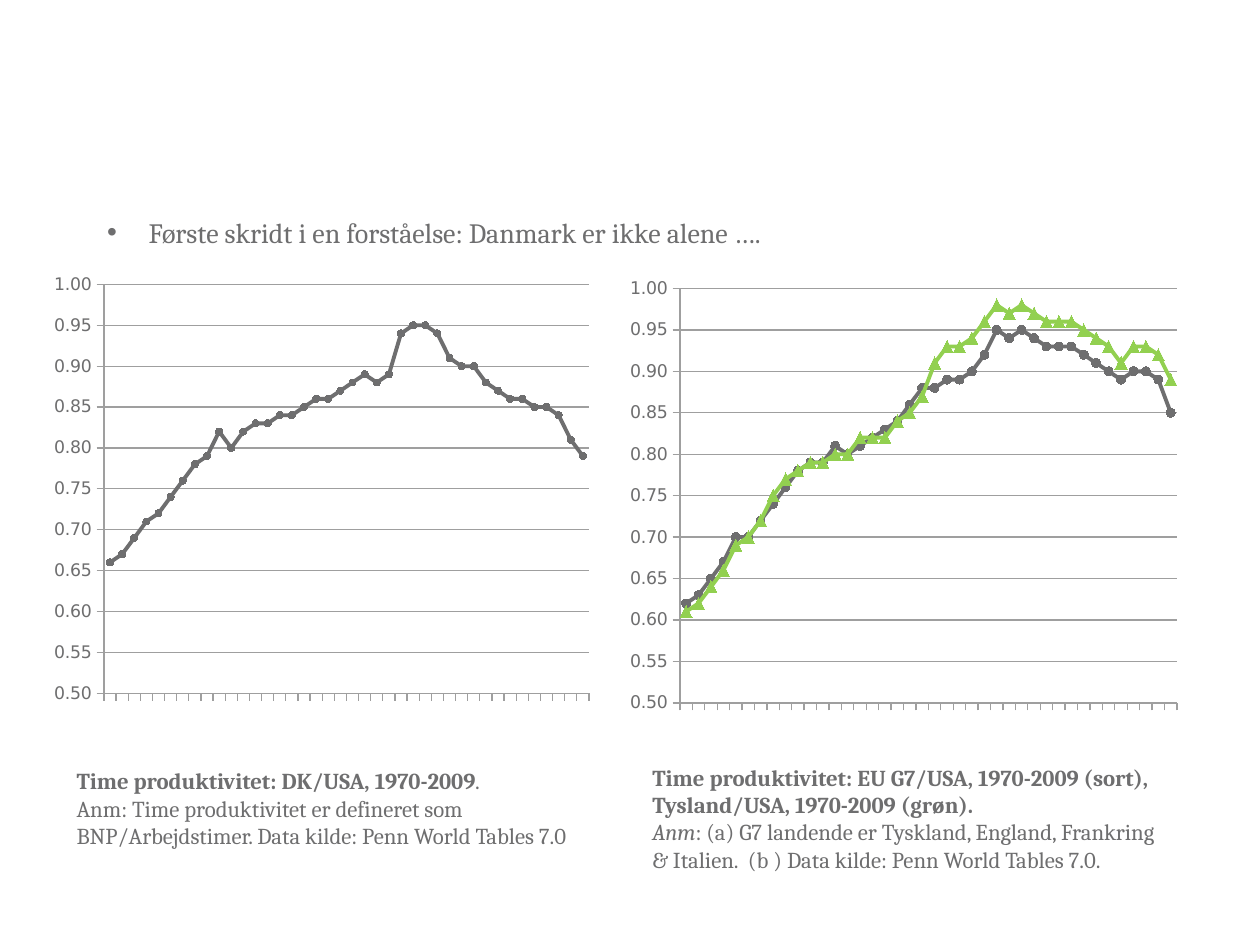
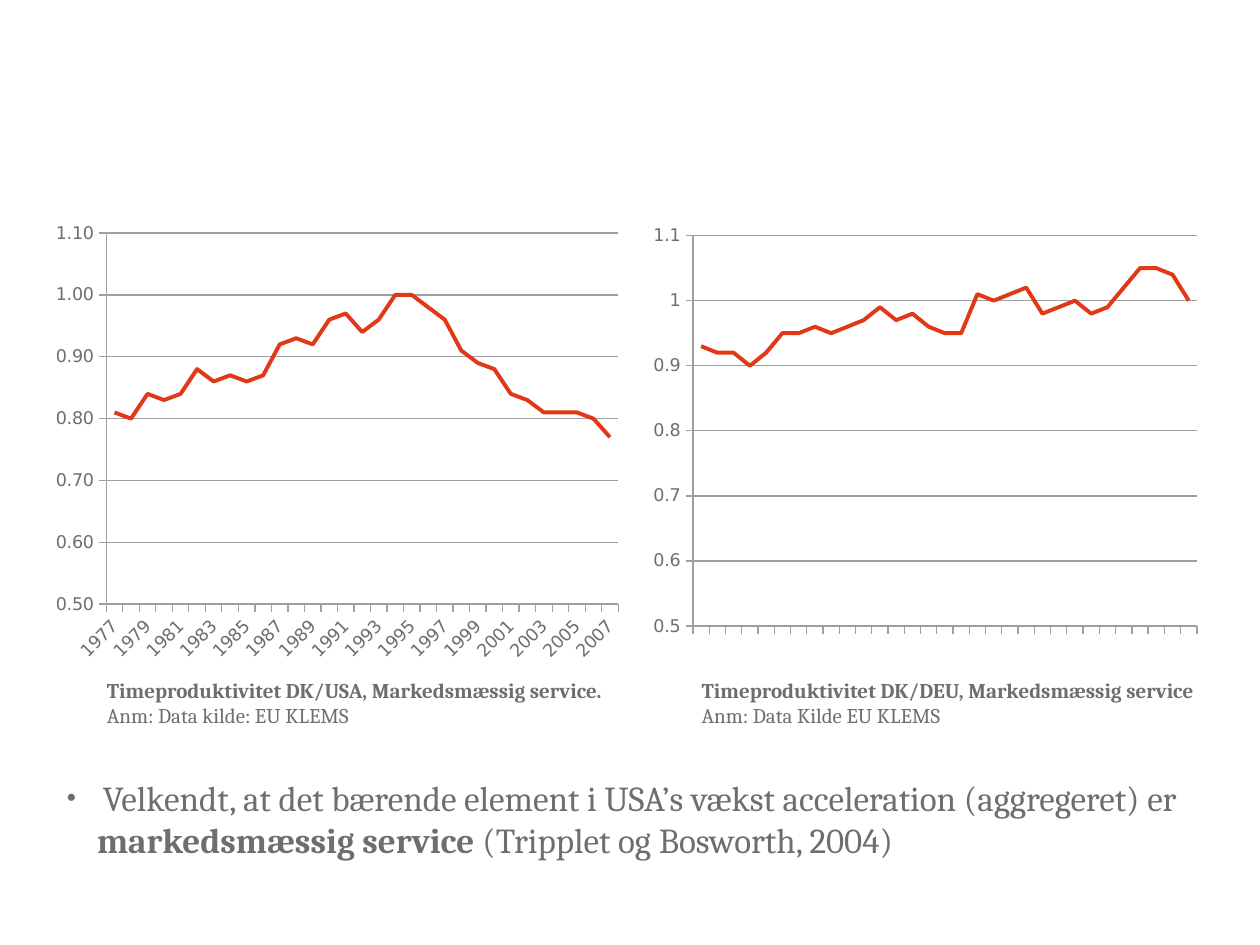
from lxml import etree
from pptx import Presentation
from pptx.chart.data import CategoryChartData
from pptx.dml.color import RGBColor
from pptx.enum.chart import XL_CHART_TYPE, XL_MARKER_STYLE, XL_TICK_LABEL_POSITION, XL_TICK_MARK
from pptx.enum.text import MSO_ANCHOR, MSO_AUTO_SIZE
from pptx.oxml.ns import qn
from pptx.util import Inches, Pt

LINE, LINE_MARKERS = XL_CHART_TYPE.LINE, XL_CHART_TYPE.LINE_MARKERS
CIRCLE, TRIANGLE = XL_MARKER_STYLE.CIRCLE, XL_MARKER_STYLE.TRIANGLE
LOW, NO_LABELS = XL_TICK_LABEL_POSITION.LOW, XL_TICK_LABEL_POSITION.NONE
OUTSIDE, NO_TICKS = XL_TICK_MARK.OUTSIDE, XL_TICK_MARK.NONE
TOP, NO_AUTOFIT = MSO_ANCHOR.TOP, MSO_AUTO_SIZE.NONE

GRAY, GREEN, RED, GRID = "6E6E6F", "92D050", "E13818", "9F9F9F"
TEXT_FONT, CHART_FONT = "Cambria", "DejaVu Sans"
TITLE_AND_CONTENT = 1

TOTAL_YEARS = range(1970, 2010)
SERVICE_YEARS = range(1977, 2008)

DK_USA = [
    0.66, 0.67, 0.69, 0.71, 0.72, 0.74, 0.76, 0.78, 0.79, 0.82,
    0.80, 0.82, 0.83, 0.83, 0.84, 0.84, 0.85, 0.86, 0.86, 0.87,
    0.88, 0.89, 0.88, 0.89, 0.94, 0.95, 0.95, 0.94, 0.91, 0.90,
    0.90, 0.88, 0.87, 0.86, 0.86, 0.85, 0.85, 0.84, 0.81, 0.79,
]
G7_USA = [
    0.62, 0.63, 0.65, 0.67, 0.70, 0.70, 0.72, 0.74, 0.76, 0.78,
    0.79, 0.79, 0.81, 0.80, 0.81, 0.82, 0.83, 0.84, 0.86, 0.88,
    0.88, 0.89, 0.89, 0.90, 0.92, 0.95, 0.94, 0.95, 0.94, 0.93,
    0.93, 0.93, 0.92, 0.91, 0.90, 0.89, 0.90, 0.90, 0.89, 0.85,
]
GERMANY_USA = [
    0.61, 0.62, 0.64, 0.66, 0.69, 0.70, 0.72, 0.75, 0.77, 0.78,
    0.79, 0.79, 0.80, 0.80, 0.82, 0.82, 0.82, 0.84, 0.85, 0.87,
    0.91, 0.93, 0.93, 0.94, 0.96, 0.98, 0.97, 0.98, 0.97, 0.96,
    0.96, 0.96, 0.95, 0.94, 0.93, 0.91, 0.93, 0.93, 0.92, 0.89,
]
SERVICE_DK_USA = [
    0.81, 0.80, 0.84, 0.83, 0.84, 0.88, 0.86, 0.87, 0.86, 0.87, 0.92,
    0.93, 0.92, 0.96, 0.97, 0.94, 0.96, 1.00, 1.00, 0.98, 0.96, 0.91,
    0.89, 0.88, 0.84, 0.83, 0.81, 0.81, 0.81, 0.80, 0.77,
]
SERVICE_DK_GERMANY = [
    0.93, 0.92, 0.92, 0.90, 0.92, 0.95, 0.95, 0.96, 0.95, 0.96, 0.97,
    0.99, 0.97, 0.98, 0.96, 0.95, 0.95, 1.01, 1.00, 1.01, 1.02, 0.98,
    0.99, 1.00, 0.98, 0.99, 1.02, 1.05, 1.05, 1.04, 1.00,
]

BOLD, ITALIC, PLAIN = {"bold": True}, {"italic": True}, {}
SMALL = {"size": Pt(15)}

SLIDES = [
    {
        "years": TOTAL_YEARS,
        "scale": {"minimum_scale": 0.5, "maximum_scale": 1, "major_unit": 0.05},
        "bullet": {
            "box": (0.75, 1.66, 7.64, 0.37), "size": 16, "indent": 0.33,
            "paragraphs": [[("Første skridt i en forståelse: Danmark er ikke alene ….", PLAIN)]],
        },
        "charts": [
            {"box": (0.43, 2.18, 4.25, 3.7), "plot": (0.35, 0.05, 3.9, 3.27), "format": "0.00",
             "series": [("DK/USA", DK_USA, GRAY, CIRCLE, 4)]},
            {"box": (5, 2.18, 4.49, 3.78), "plot": (0.35, 0.11, 3.99, 3.29), "format": "0.00",
             "series": [("EU G7/USA", G7_USA, GRAY, CIRCLE, 5),
                        ("Tyskland/USA", GERMANY_USA, GREEN, TRIANGLE, 7)]},
        ],
        "captions": [
            {"box": (0.51, 6.04, 4.33, 0.76), "size": 13, "paragraphs": [
                [("Time produktivitet: DK/USA, 1970-2009", BOLD), (".", PLAIN)],
                [("Anm: Time produktivitet er defineret som BNP/Arbejdstimer. "
                  "Data kilde: Penn World Tables 7.0", PLAIN)],
            ]},
            {"box": (5.08, 6.01, 4.33, 1.2), "size": 13, "paragraphs": [
                [("Time produktivitet: EU G7/USA, 1970-2009 (sort), "
                  "Tysland/USA, 1970-2009 (grøn).", BOLD)],
                [("Anm", ITALIC), (": (a) G7 landende er Tyskland, England, Frankring & Italien.  "
                                   "(b ) Data kilde: Penn World Tables 7.0.", PLAIN)],
            ]},
        ],
    },
    {
        "years": SERVICE_YEARS,
        "scale": {"minimum_scale": 0.5, "maximum_scale": 1.1, "major_unit": 0.1},
        "bullet": {
            "box": (0.43, 6.11, 9.14, 0.77), "size": 20, "indent": 0.24,
            "paragraphs": [[
                (" ", SMALL),
                ("Velkendt, at det bærende element i USA’s vækst acceleration (aggregeret) er ", PLAIN),
                ("markedsmæssig service", BOLD),
                (" (Tripplet og Bosworth, 2004)", PLAIN),
            ]],
        },
        "charts": [
            {"box": (0.35, 1.7, 4.65, 3.62), "format": "0.00", "show_years": True,
             "series": [("DK/USA", SERVICE_DK_USA, RED, None, None)]},
            {"box": (4.92, 1.78, 4.8, 3.62), "plot": (0.58, 0.09, 4, 3.1), "format": "General",
             "series": [("DK/DEU", SERVICE_DK_GERMANY, RED, None, None)]},
        ],
        "captions": [
            {"box": (0.75, 5.33, 4.33, 0.51), "size": 12, "paragraphs": [
                [("Timeproduktivitet DK/USA, Markedsmæssig service.", BOLD)],
                [("Anm: Data kilde: EU KLEMS", PLAIN)],
            ]},
            {"box": (5.47, 5.33, 4.33, 0.51), "size": 12, "paragraphs": [
                [("Timeproduktivitet DK/DEU, Markedsmæssig service", BOLD)],
                [("Anm: Data Kilde EU KLEMS", PLAIN)],
            ]},
        ],
    },
]


def color(value):
    """Turn a hex string into a colour."""
    return RGBColor.from_string(value)


def set_attributes(target, values):
    """Set each named value on the target."""
    for name, value in values.items():
        setattr(target, name, value)


def set_line(line, value, width):
    """Give a line its colour and its width in points."""
    line.color.rgb = color(value)
    line.width = Pt(width)


def set_font(font, name, size, style=PLAIN):
    """Give a font its name, size and text colour, then any special style."""
    set_attributes(font, {"name": name, "size": Pt(size), **style})
    font.color.rgb = color(GRAY)


def fill_text(shape, size, paragraphs):
    """Write formatted paragraphs into a shape."""
    frame = shape.text_frame
    set_attributes(frame, {"word_wrap": True, "auto_size": NO_AUTOFIT, "vertical_anchor": TOP})
    for index, runs in enumerate(paragraphs):
        paragraph = frame.add_paragraph() if index else frame.paragraphs[0]
        paragraph.space_before = Pt(0)
        for text, style in runs:
            run = paragraph.add_run()
            run.text = text
            set_font(run.font, TEXT_FONT, size, style)


def fill_bullet(placeholder, bullet):
    """Place the body placeholder and write its bulleted line."""
    names = ("left", "top", "width", "height")
    set_attributes(placeholder, dict(zip(names, map(Inches, bullet["box"]))))
    properties = placeholder.text_frame.paragraphs[0]._p.get_or_add_pPr()
    indent = Inches(bullet["indent"])
    properties.set("marL", str(indent))
    properties.set("indent", str(-indent))
    etree.SubElement(properties, qn("a:buChar")).set("char", "•")
    fill_text(placeholder, bullet["size"], bullet["paragraphs"])


def set_plot_area(chart, box, plot):
    """Fix the inner plot area, given in inches from the chart's corner."""
    area = chart._chartSpace.find(f".//{qn('c:plotArea')}")
    for layout in area.findall(qn("c:layout")):
        area.remove(layout)
    layout = etree.Element(qn("c:layout"))
    area.insert(0, layout)
    manual = etree.SubElement(layout, qn("c:manualLayout"))
    width, height = box[2:]
    fractions = [length / side for length, side in zip(plot, (width, height) * 2)]
    values = {"layoutTarget": "inner", "xMode": "edge", "yMode": "edge",
              **dict(zip("xywh", fractions))}
    for name, value in values.items():
        etree.SubElement(manual, qn(f"c:{name}")).set("val", str(value))


def slant_years(axis):
    """Show every second year, turned 45 degrees."""
    set_font(axis.tick_labels.font, CHART_FONT, 10)
    element = axis._element
    element.find(f"{qn('c:txPr')}/{qn('a:bodyPr')}").set("rot", "-2700000")
    skip = etree.Element(qn("c:tickLblSkip"))
    skip.set("val", "2")
    element.find(qn("c:noMultiLvlLbl")).addprevious(skip)


def add_line_chart(slide, years, scale, content):
    """Add a line chart of productivity ratios."""
    data = CategoryChartData(number_format="0.00")
    data.categories = [str(year) for year in years]
    for name, values, *_ in content["series"]:
        data.add_series(name, values)
    kind = LINE_MARKERS if content["series"][0][3] else LINE
    chart = slide.shapes.add_chart(kind, *map(Inches, content["box"]), data).chart
    set_attributes(chart, {"has_title": False, "has_legend": False})
    set_font(chart.font, CHART_FONT, 10)
    chart.plots[0].vary_by_categories = False

    show_years = content.get("show_years", False)
    category_axis, value_axis = chart.category_axis, chart.value_axis
    ticks = {"major_tick_mark": OUTSIDE, "minor_tick_mark": NO_TICKS}
    set_attributes(category_axis, {
        **ticks, "has_major_gridlines": False,
        "tick_label_position": LOW if show_years else NO_LABELS,
    })
    set_attributes(value_axis, {**ticks, **scale, "has_major_gridlines": True})
    set_attributes(value_axis.tick_labels, {
        "number_format": content["format"], "number_format_is_linked": False,
    })
    for part in (category_axis, value_axis, value_axis.major_gridlines):
        set_line(part.format.line, GRID, 0.75)
    if show_years:
        slant_years(category_axis)

    for series, (_, _, tint, marker, size) in zip(chart.plots[0].series, content["series"]):
        series.smooth = False
        set_line(series.format.line, tint, 2.25)
        if marker:
            set_attributes(series.marker, {"style": marker, "size": size})
            series.marker.format.fill.solid()
            series.marker.format.fill.fore_color.rgb = color(tint)
            set_line(series.marker.format.line, tint, 0.75)
    if "plot" in content:
        set_plot_area(chart, content["box"], content["plot"])


def add_slide(presentation, content):
    """Add a slide with two charts, their captions and a bullet."""
    slide = presentation.slides.add_slide(presentation.slide_layouts[TITLE_AND_CONTENT])
    title = slide.shapes.title._element
    title.getparent().remove(title)
    for chart in content["charts"]:
        add_line_chart(slide, content["years"], content["scale"], chart)
    for caption in content["captions"]:
        box = slide.shapes.add_textbox(*map(Inches, caption["box"]))
        fill_text(box, caption["size"], caption["paragraphs"])
    fill_bullet(slide.placeholders[1], content["bullet"])


def main():
    """Build and save the presentation."""
    presentation = Presentation()
    set_attributes(presentation, {"slide_width": Inches(10), "slide_height": Inches(7.5)})
    for content in SLIDES:
        add_slide(presentation, content)
    presentation.save("out.pptx")


if __name__ == "__main__":
    main()
